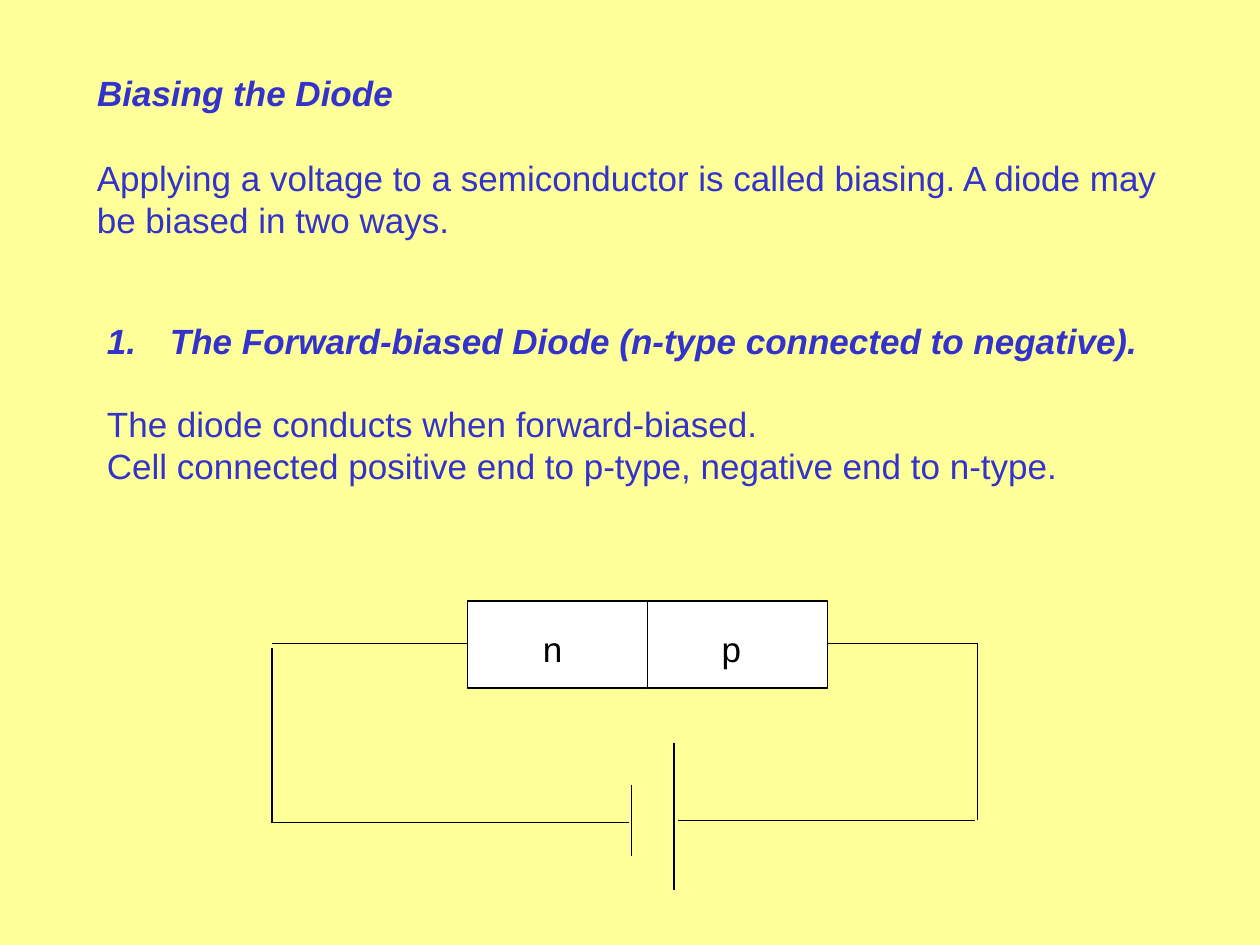
from lxml import etree
from pptx import Presentation
from pptx.dml.color import RGBColor
from pptx.enum.shapes import MSO_CONNECTOR, MSO_SHAPE
from pptx.enum.text import MSO_ANCHOR, MSO_AUTO_SIZE, PP_ALIGN
from pptx.oxml.ns import qn
from pptx.util import Inches, Pt

STRAIGHT = MSO_CONNECTOR.STRAIGHT
RECTANGLE = MSO_SHAPE.RECTANGLE
TOP = MSO_ANCHOR.TOP
LEFT = PP_ALIGN.LEFT
NO_FIT = MSO_AUTO_SIZE.NONE
FIT_SHAPE = MSO_AUTO_SIZE.SHAPE_TO_FIT_TEXT

YELLOW = RGBColor(0xFF, 0xFF, 0x99)
BLUE = RGBColor(0x33, 0x33, 0xCC)
BLACK = RGBColor(0, 0, 0)
WHITE = RGBColor(0xFF, 0xFF, 0xFF)

TITLE_ONLY = 5
LINE_GAP = 23  # points, one line of 20 pt text


def write(p, text, color=BLUE, strong=False, before=0, hanging=0, numbered=False):
    """Fill a paragraph; hanging is the hanging indent in inches."""
    p.alignment = LEFT
    p.space_before = Pt(before)
    r = p.add_run()
    r.text = text
    r.font.name = "Arial"
    r.font.size = Pt(20)
    r.font.bold = r.font.italic = strong
    r.font.color.rgb = color
    pPr = p._p.get_or_add_pPr()
    if hanging:
        pPr.set("marL", str(Inches(hanging)))
        pPr.set("indent", str(-Inches(hanging)))
    if numbered:
        etree.SubElement(pPr, qn("a:buFont"), typeface="+mj-lt")
        etree.SubElement(pPr, qn("a:buAutoNum"), type="arabicPeriod")


class DiodeSlide:
    def __init__(self, prs):
        self.s = prs.slides.add_slide(prs.slide_layouts[TITLE_ONLY])
        self.s.background.fill.solid()
        self.s.background.fill.fore_color.rgb = YELLOW
        self.shapes = self.s.shapes

    def start_group(self):
        """Place all later elements in a new group."""
        self.shapes = self.s.shapes.add_group_shape().shapes

    def title(self, text, x, y, w, h):
        sp = self.s.shapes.title
        sp.left, sp.top, sp.width, sp.height = map(Inches, (x, y, w, h))
        tf = sp.text_frame
        tf.vertical_anchor = TOP
        tf.auto_size = NO_FIT
        write(tf.paragraphs[0], text, strong=True)

    def text(self, x, y, w, h, *paragraphs):
        """Add a text box; each paragraph is a (text, format) pair."""
        tf = self.shapes.add_textbox(*map(Inches, (x, y, w, h))).text_frame
        tf.word_wrap = True
        tf.auto_size = FIT_SHAPE
        for i, (text, style) in enumerate(paragraphs):
            p = tf.add_paragraph() if i else tf.paragraphs[0]
            write(p, text, **style)

    def box(self, x, y, w, h):
        sp = self.shapes.add_shape(RECTANGLE, *map(Inches, (x, y, w, h)))
        sp.shadow.inherit = False
        sp.fill.solid()
        sp.fill.fore_color.rgb = WHITE
        sp.line.color.rgb = BLACK
        sp.line.width = Pt(0.75)

    def wire(self, x1, y1, x2, y2):
        line = self.shapes.add_connector(STRAIGHT, *map(Inches, (x1, y1, x2, y2)))
        line.line.color.rgb = BLACK
        line.line.width = Pt(0.75)
        etree.SubElement(line._element.spPr, qn("a:effectLst"))


def main():
    prs = Presentation()
    prs.slide_width, prs.slide_height = Inches(10), Inches(7.5)
    slide = DiodeSlide(prs)

    slide.title("Biasing the Diode", 0.67, 0.52, 8.82, 0.43)
    slide.text(0.67, 1.19, 8.82, 0.77, (
        "Applying a voltage to a semiconductor is called biasing. "
        "A diode may be biased in two ways.", {}))
    slide.text(
        0.75, 2.49, 8.58, 1.43,
        ("The Forward-biased Diode (n-type connected to negative).",
         dict(strong=True, hanging=0.5, numbered=True)),
        ("The diode conducts when forward-biased.",
         dict(hanging=0.5, before=LINE_GAP)),
        ("Cell connected positive end to p-type, negative end to n-type.",
         dict(hanging=0.5)))

    slide.start_group()
    left, right, top = 2.16, 7.76, 5.11
    slide.wire(left, top, right, top)

    diode_x, half_w = 3.71, 1.43
    for i in range(2):
        slide.box(diode_x + i * half_w, 4.77, half_w, 0.69)

    circuit = [
        (left, 5.14, left, 6.53),
        (right, top, right, 6.51),
        (left, 6.53, 4.99, 6.53),
        (5.38, 6.51, 7.74, 6.51),
    ]
    cell_plates = [(5.01, 6.23, 5.01, 6.79), (5.35, 5.9, 5.35, 7.06)]
    for ends in circuit + cell_plates:
        slide.wire(*ends)

    for name, x in (("p", 5.63), ("n", 4.21)):
        slide.text(x, 4.93, 0.47, 0.43, (name, dict(color=BLACK)))

    prs.save("out.pptx")


if __name__ == "__main__":
    main()
